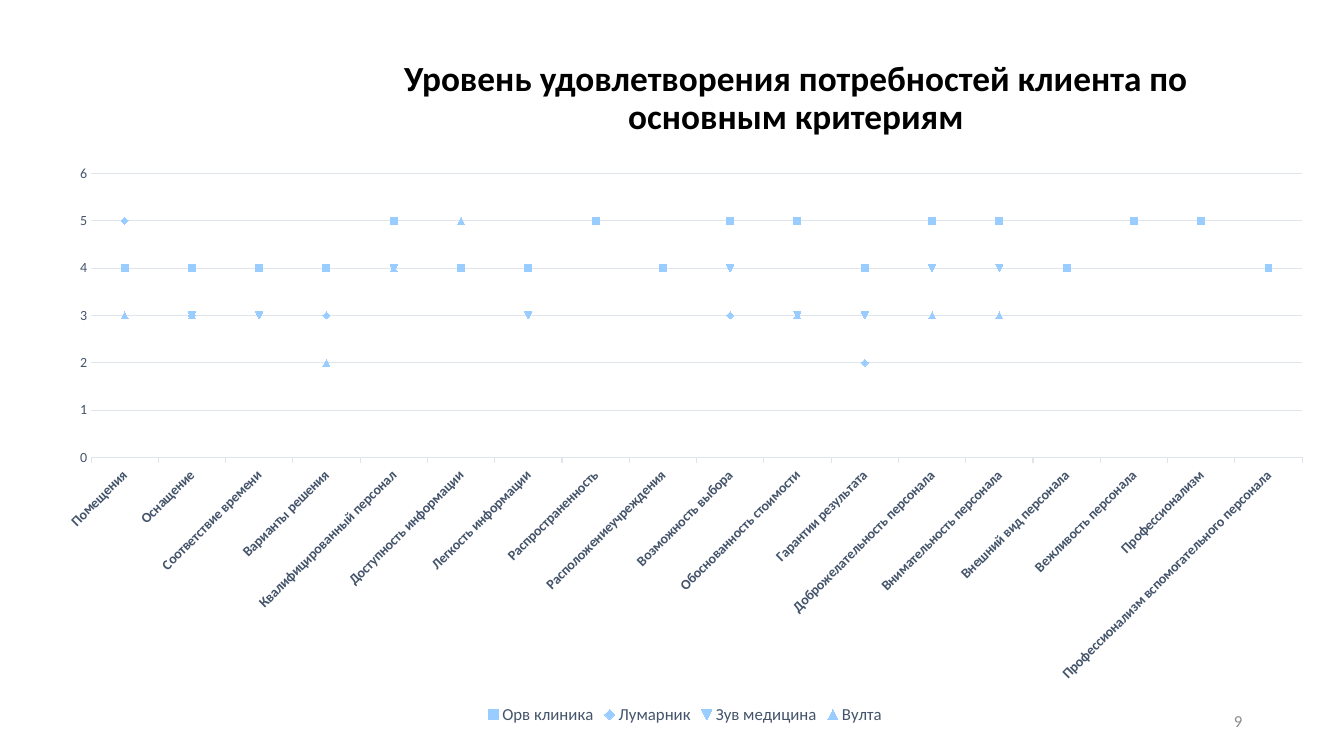
from dataclasses import dataclass

import pptx
import pptx.chart.data
import pptx.dml.color
import pptx.enum.chart
import pptx.enum.text
import pptx.util

Inches, Pt = pptx.util.Inches, pptx.util.Pt
RGBColor = pptx.dml.color.RGBColor
PP_ALIGN, MSO_ANCHOR = pptx.enum.text.PP_ALIGN, pptx.enum.text.MSO_ANCHOR
XL = pptx.enum.chart

FONT = "Calibri"
BLACK = RGBColor(0x00, 0x00, 0x00)
GRAY = RGBColor(0x8C, 0x8C, 0x8C)
SLATE = RGBColor(0x44, 0x54, 0x6A)
GRID = RGBColor(0xE0, 0xE5, 0xEB)
MARKER = RGBColor(0x99, 0xCC, 0xFF)


@dataclass
class Clinic:
    name: str
    scores: list[int]


CRITERIA = [
    "Помещения", "Оснащение", "Соответствие времени", "Варианты решения",
    "Квалифицированный персонал", "Доступность информации",
    "Легкость информации", "Распространенность", "Расположениеучреждения",
    "Возможность выбора", "Обоснованность стоимости", "Гарантии результата",
    "Доброжелательность персонала", "Внимательность персонала",
    "Внешний вид персонала", "Вежливость персонала", "Профессионализм",
    "Профессионализм вспомогательного персонала",
]
CLINICS = [
    Clinic("Орв клиника", [4, 4, 4, 4, 5, 4, 4, 5, 4, 5, 5, 4, 5, 5, 4, 5, 5, 4]),
    Clinic("Лумарник", [5, 3, 4, 3, 5, 4, 4, 5, 4, 3, 5, 2, 5, 5, 4, 5, 5, 4]),
    Clinic("Зув медицина", [4, 3, 3, 4, 4, 4, 3, 5, 4, 4, 3, 3, 4, 4, 4, 5, 5, 4]),
    Clinic("Вулта", [3, 3, 4, 2, 4, 5, 4, 5, 4, 5, 3, 4, 3, 3, 4, 5, 5, 4]),
]


def style_font(font: pptx.text.text.Font, size: float, color: RGBColor,
               bold: bool = False) -> None:
    font.name, font.size, font.bold = FONT, Pt(size), bold
    font.color.rgb = color


def style_line(line: pptx.dml.line.LineFormat) -> None:
    line.color.rgb = GRID
    line.width = Pt(0.75)


def write_text(sp: pptx.shapes.autoshape.Shape, text: str, size: float,
               color: RGBColor, align: PP_ALIGN, bold: bool = False) -> None:
    tf = sp.text_frame
    tf.text = text
    tf.word_wrap = True
    tf.auto_size = pptx.enum.text.MSO_AUTO_SIZE.NONE
    tf.vertical_anchor = MSO_ANCHOR.MIDDLE
    p = tf.paragraphs[0]
    p.alignment = align
    style_font(p.runs[0].font, size, color, bold)


def add_scores(s: pptx.slide.Slide) -> None:
    data = pptx.chart.data.CategoryChartData()
    data.categories = CRITERIA
    for clinic in CLINICS:
        data.add_series(clinic.name, clinic.scores)
    chart = s.shapes.add_chart(
        XL.XL_CHART_TYPE.LINE_MARKERS, Inches(0.42), Inches(1.53),
        Inches(12.75), Inches(5.7), data).chart
    chart.has_title = False
    style_font(chart.font, 10, BLACK)

    # Markers without connecting lines
    chart.plots[0].vary_by_categories = False
    for series in chart.plots[0].series:
        series.smooth = False
        series.format.line.fill.background()
        series.marker.size = 5
        series.marker.format.fill.solid()
        series.marker.format.fill.fore_color.rgb = MARKER
        series.marker.format.line.fill.background()

    # Axes
    cat, val = chart.category_axis, chart.value_axis
    cat.major_tick_mark = XL.XL_TICK_MARK.OUTSIDE
    style_font(cat.tick_labels.font, 10, SLATE, bold=True)
    style_line(cat.format.line)
    cat._element.txPr.bodyPr.set("rot", "-2700000")
    val.minimum_scale, val.maximum_scale, val.major_unit = 0, 6, 1
    val.major_tick_mark = XL.XL_TICK_MARK.NONE
    style_font(val.tick_labels.font, 10, SLATE)
    val.format.line.fill.background()
    val.has_major_gridlines = True
    style_line(val.major_gridlines.format.line)

    # Legend
    chart.has_legend = True
    chart.legend.position = XL.XL_LEGEND_POSITION.BOTTOM
    chart.legend.include_in_layout = False
    style_font(chart.legend.font, 12, SLATE)


def main() -> None:
    prs = pptx.Presentation()
    prs.slide_width, prs.slide_height = Inches(13.33), Inches(7.5)
    s = prs.slides.add_slide(prs.slide_layouts[5])

    # Title
    title = s.shapes.title
    title.left, title.top = Inches(3.18), Inches(0.61)
    title.width, title.height = Inches(9.43), Inches(0.75)
    write_text(title, "Уровень удовлетворения потребностей клиента по основным критериям",
               25.2, BLACK, PP_ALIGN.CENTER, bold=True)
    title.text_frame.paragraphs[0].line_spacing = 0.9

    # Slide number
    number = s.shapes.add_textbox(Inches(9.42), Inches(6.95), Inches(3), Inches(0.4))
    write_text(number, "9", 12, GRAY, PP_ALIGN.RIGHT)

    # Chart
    add_scores(s)
    prs.save("out.pptx")


if __name__ == "__main__":
    main()
